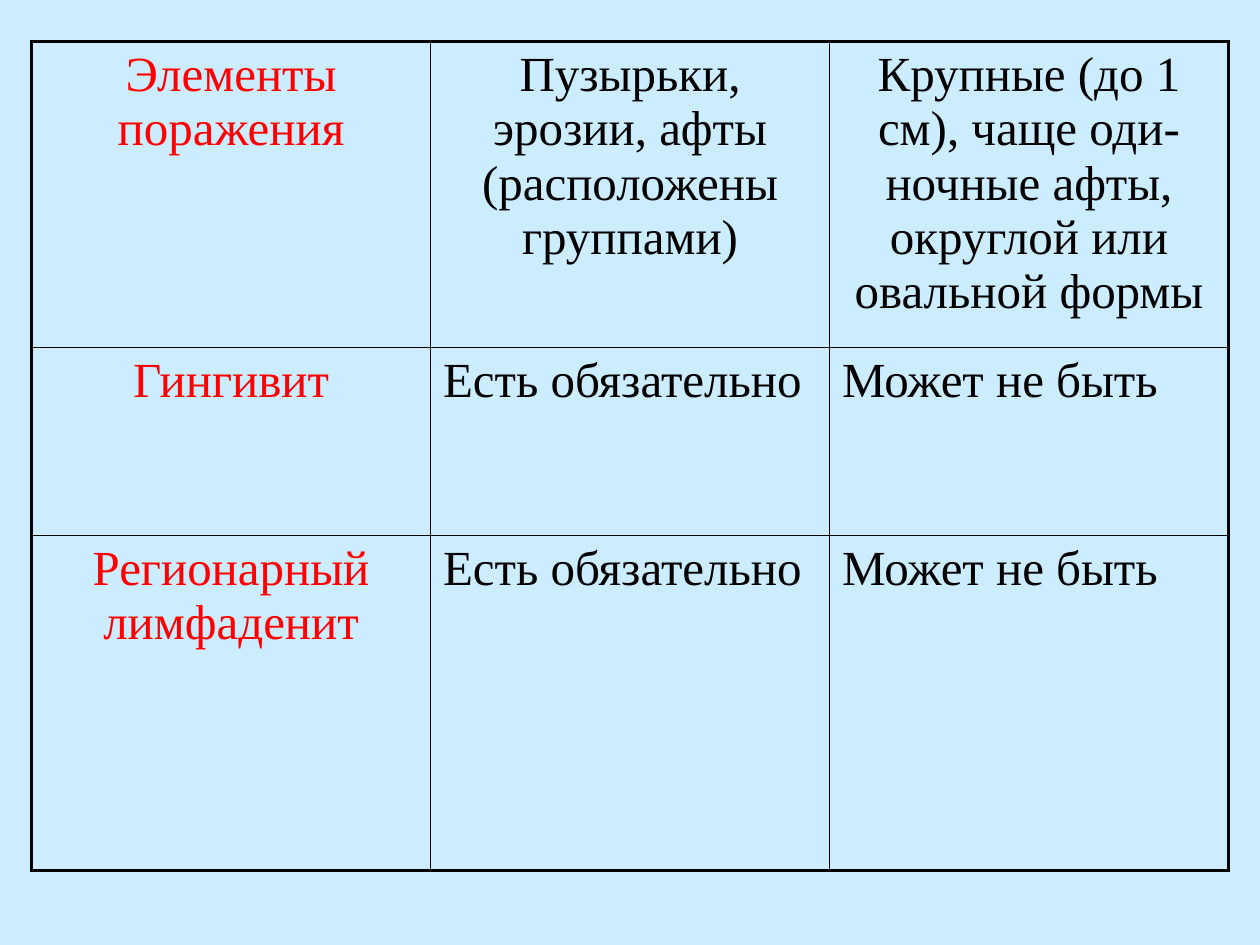
from lxml.etree import SubElement as Sub
from pptx import Presentation
from pptx.dml.color import RGBColor as RGB
from pptx.enum.text import PP_ALIGN as Align
from pptx.oxml.ns import qn
from pptx.util import Inches, Pt

ROWS = [
    ("Элементы поражения",
     "Пузырьки, эрозии, афты (расположены группами)",
     "Крупные (до 1 см), чаще оди- ночные афты, округлой или овальной формы"),
    ("Гингивит", "Есть обязательно", "Может не быть"),
    ("Регионарный лимфаденит", "Есть обязательно", "Может не быть"),
]
LEFT, TOP, WIDTH = 0.25, 0.33, 9.5
HEIGHTS = [2.43, 1.49, 2.66]
THEME = {
    "back": "CCECFF", "head": "FF0000", "text": "000000", "line": "000000",
    "font": "Times New Roman", "size": 28, "outer": 2.25, "inner": 1,
}


def rule(cell, sides):
    """Draw the cell's borders; sides maps a side letter to True on the table's edge."""
    props = cell._tc.get_or_add_tcPr()
    for side, edge in sides.items():
        width = Pt(THEME["outer" if edge else "inner"])
        line = Sub(props, qn(f"a:ln{side}"), w=str(width))
        fill = Sub(line, qn("a:solidFill"))
        Sub(fill, qn("a:srgbClr"), val=THEME["line"])


def write(cell, text, color, align):
    cell.text = text
    para = cell.text_frame.paragraphs[0]
    para.alignment = align
    form = {"name": THEME["font"], "size": Pt(THEME["size"]), "bold": False}
    for key, value in form.items():
        setattr(para.runs[0].font, key, value)
    para.runs[0].font.color.rgb = RGB.from_string(color)


def main():
    deck = Presentation()
    deck.slide_width, deck.slide_height = Inches(10), Inches(7.5)
    slide = deck.slides.add_slide(deck.slide_layouts[6])
    back = slide.background.fill
    back.solid()
    back.fore_color.rgb = RGB.from_string(THEME["back"])

    count, span = len(ROWS), len(ROWS[0])
    table = slide.shapes.add_table(
        count, span, Inches(LEFT), Inches(TOP), Inches(WIDTH), Inches(sum(HEIGHTS))).table
    table.first_row = table.horz_banding = False
    for col in table.columns:
        col.width = Inches(WIDTH / span)

    for r, (texts, height) in enumerate(zip(ROWS, HEIGHTS)):
        table.rows[r].height = Inches(height)
        for c, text in enumerate(texts):
            cell = table.cell(r, c)
            color = THEME["head" if c == 0 else "text"]
            write(cell, text, color, Align.CENTER if 0 in (r, c) else Align.LEFT)
            rule(cell, {"L": c == 0, "R": c == span - 1, "T": r == 0, "B": r == count - 1})
            cell.fill.background()

    deck.save("out.pptx")


if __name__ == "__main__":
    main()
